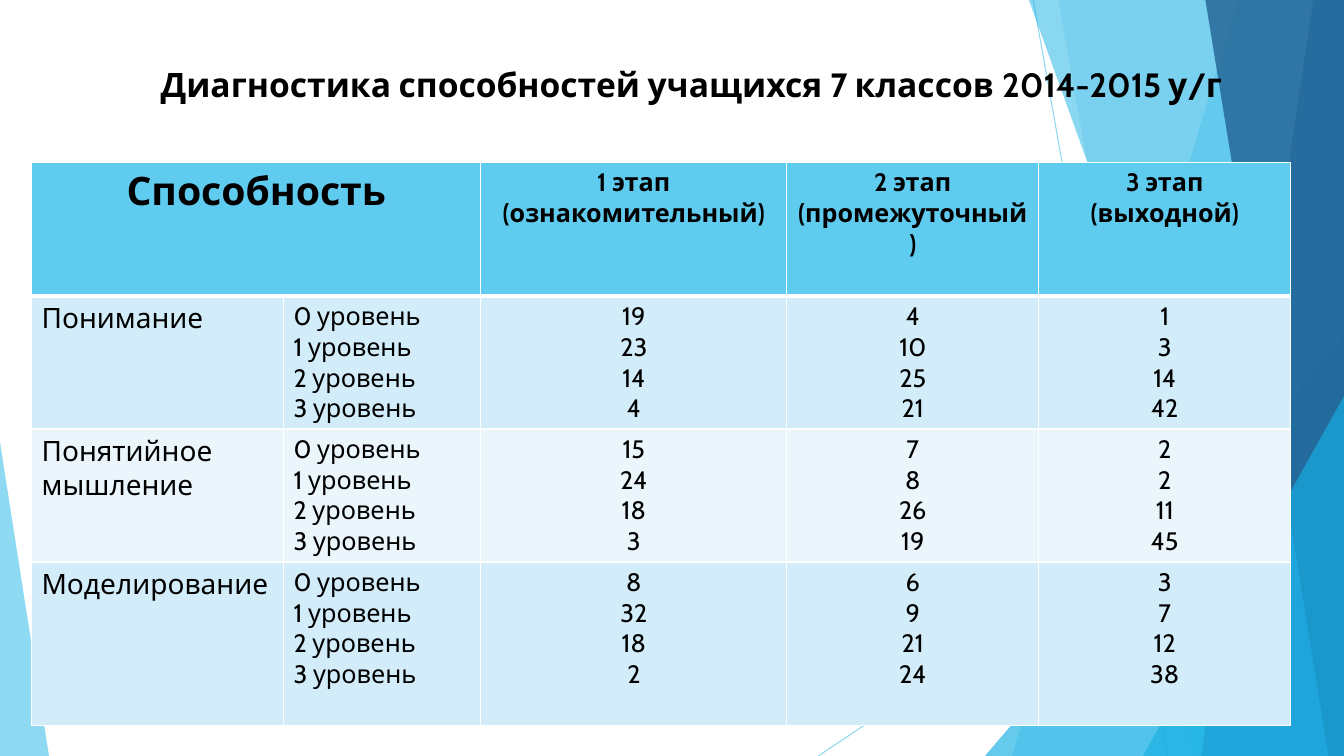
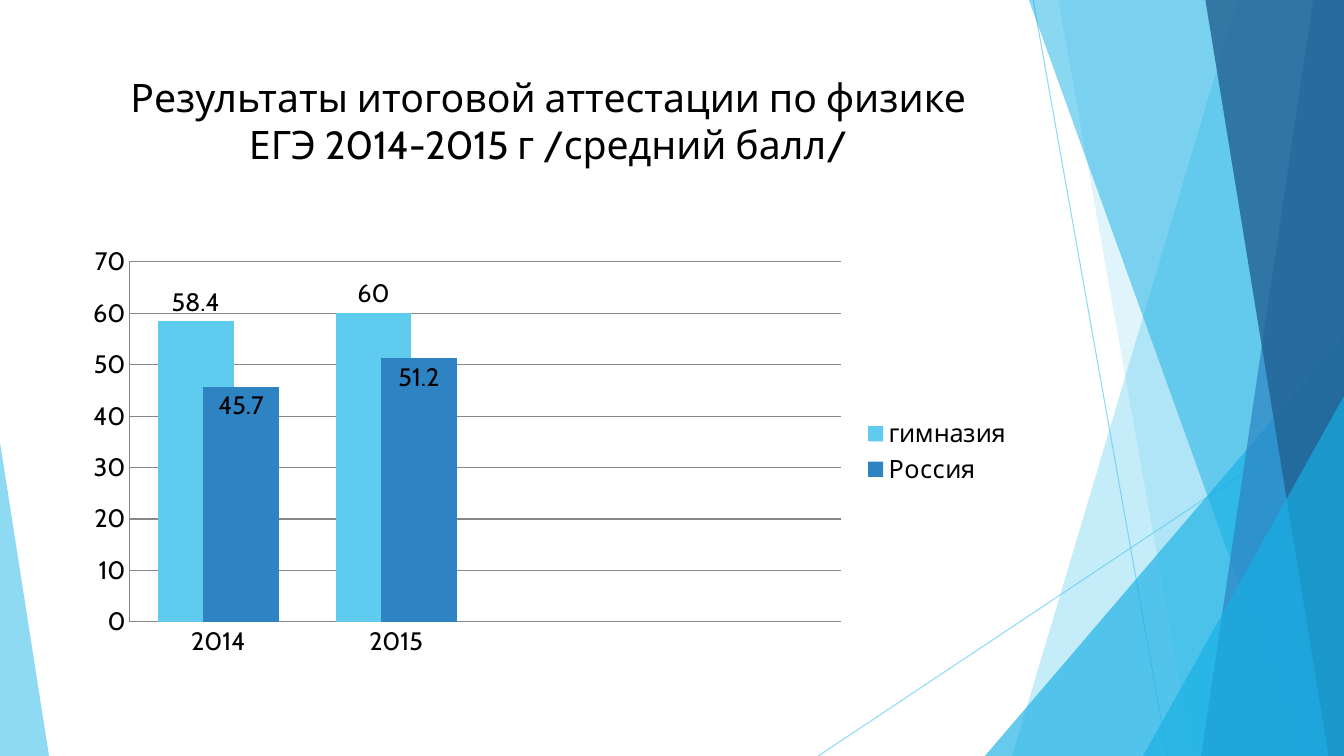
"""Two slides on school results: a table of abilities and a chart of exam scores."""
from lxml import etree
from pptx import Presentation
from pptx.chart.data import CategoryChartData
from pptx.dml.color import RGBColor
from pptx.enum.chart import XL_CHART_TYPE, XL_LABEL_POSITION, XL_LEGEND_POSITION, XL_TICK_MARK
from pptx.enum.shapes import MSO_CONNECTOR, MSO_SHAPE
from pptx.enum.text import MSO_ANCHOR, PP_ALIGN
from pptx.oxml.ns import qn
from pptx.util import Pt

SKY = RGBColor(0x5F, 0xCB, 0xEF)
AQUA = RGBColor(0x17, 0xB0, 0xE4)
BLUE = RGBColor(0x2E, 0x83, 0xC3)
NAVY = RGBColor(0x22, 0x62, 0x92)
PALE = RGBColor(0xD2, 0xEC, 0xF9)
MIST = RGBColor(0xEA, 0xF6, 0xFC)
GREY = RGBColor(0x87, 0x87, 0x87)
BLACK = RGBColor(0, 0, 0)
WHITE = RGBColor(255, 255, 255)
FONT = "Cabin"
WIDE, HIGH = 960, 540

LEFT, CENTER = PP_ALIGN.LEFT, PP_ALIGN.CENTER
MIDDLE = MSO_ANCHOR.MIDDLE
LINE = MSO_CONNECTOR.STRAIGHT
WEDGE = MSO_SHAPE.ISOSCELES_TRIANGLE
COLUMN = XL_CHART_TYPE.COLUMN_CLUSTERED
RIGHT = XL_LEGEND_POSITION.RIGHT
ABOVE, INSIDE = XL_LABEL_POSITION.OUTSIDE_END, XL_LABEL_POSITION.INSIDE_END
NO_TICK = XL_TICK_MARK.NONE

RAYS = [(738, 0, 834, HIGH), (WIDE, 290, 584.5, HIGH)]
BANDS = [
    ("band", (884, 723), SKY, 36),
    ("band", (756, 852), SKY, 20),
    ("wedge", (703.5, 240, 256.5, 300, 1), AQUA, 66),
    ("band", (735, 929.5), AQUA, 50),
    ("band", (938, 858), BLUE, 70),
    ("band", (861, 949), NAVY, 80),
    ("wedge", (816.5, 283, 143.5, 257, 1), AQUA, 66),
    ("wedge", (0, 316, 35, 224, 0), SKY, 70),
]

COLS = [180, 141, 218.5, 180, 180]
ROWS = [95.5, 95, 95, 117]
HEADS = ["Способность", "", "1 этап (ознакомительный)",
         "2 этап\n(промежуточный)", "3 этап\n(выходной)"]
LEVELS = [f"{n} уровень" for n in range(4)]
SKILLS = [
    ("Понимание", [19, 23, 14, 4], [4, 10, 25, 21], [1, 3, 14, 42]),
    ("Понятийное мышление", [15, 24, 18, 3], [7, 8, 26, 19], [2, 2, 11, 45]),
    ("Моделирование", [8, 32, 18, 2], [6, 9, 21, 24], [3, 7, 12, 38]),
]
YEARS = ["2014", "2015", "", ""]
SCORES = [
    ("гимназия", [58.4, 60, None, None], SKY, ABOVE),
    ("Россия", [45.7, 51.2, None, None], BLUE, INSIDE),
]


def points(box):
    """Turn a box of point values into lengths."""
    return [Pt(n) for n in box]


def fade(shape, share):
    """Make the colour of a shape see-through, with share in percent."""
    for tone in shape.element.iter(qn("a:srgbClr")):
        etree.SubElement(tone, qn("a:alpha"), val=str(share * 1000))


def style(font, size, bold=False):
    """Give a font the shared face and colour."""
    font.name, font.size, font.bold = FONT, Pt(size), bold
    font.color.rgb = BLACK


def write(frame, text, size, align, bold=False):
    """Fill a text frame and format all its runs."""
    frame.text = text
    for para in frame.paragraphs:
        para.alignment = align
        for run in para.runs:
            style(run.font, size, bold)


def draw_ray(slide, ends):
    """Draw one thin pale line."""
    ray = slide.shapes.add_connector(LINE, *points(ends))
    ray.line.color.rgb, ray.line.width = SKY, Pt(0.75)
    fade(ray, 70)
    etree.SubElement(ray.element.spPr, qn("a:effectLst"))


def draw_band(slide, kind, form, tone, share):
    """Draw one see-through band or wedge."""
    if kind == "band":
        top, foot = form
        path = slide.shapes.build_freeform(Pt(top), 0)
        rest = [(WIDE, 0), (WIDE, HIGH), (foot, HIGH)]
        path.add_line_segments([points(spot) for spot in rest])
        shape = path.convert_to_shape()
    else:
        *box, peak = form
        shape = slide.shapes.add_shape(WEDGE, *points(box))
        shape.adjustments[0] = peak
    shape.shadow.inherit = False
    shape.fill.solid()
    shape.fill.fore_color.rgb = tone
    shape.line.fill.background()
    fade(shape, share)


def add_base(deck):
    """Add a blank slide with the shared backdrop."""
    slide = deck.slides.add_slide(deck.slide_layouts[6])
    for ends in RAYS:
        draw_ray(slide, ends)
    for band in BANDS:
        draw_band(slide, *band)
    return slide


def add_title(slide, box, text, size, bold=False):
    """Place a centred title in the box."""
    frame = slide.shapes.add_textbox(*points(box)).text_frame
    frame.word_wrap = True
    frame.vertical_anchor = MIDDLE
    write(frame, text, size, CENTER, bold)


def edge_cell(cell, top, foot):
    """Draw white borders around a cell."""
    props = cell._tc.get_or_add_tcPr()
    for spot, (side, width) in enumerate([("L", 1), ("R", 1), ("T", top), ("B", foot)]):
        edge = etree.Element(qn(f"a:ln{side}"), w=str(Pt(width)))
        fill = etree.SubElement(edge, qn("a:solidFill"))
        etree.SubElement(fill, qn("a:srgbClr"), val=str(WHITE))
        props.insert(spot, edge)


def add_grid(slide, left, top):
    """Place the table of abilities with its corner at left, top."""
    box = (left, top, sum(COLS), sum(ROWS))
    grid = slide.shapes.add_table(len(ROWS), len(COLS), *points(box)).table
    for col, width in zip(grid.columns, COLS):
        col.width = Pt(width)
    for row, height in zip(grid.rows, ROWS):
        row.height = Pt(height)
    body = [[name, "\n".join(LEVELS)] + ["\n".join(map(str, stage)) for stage in stages]
            for name, *stages in SKILLS]
    for r, texts in enumerate([HEADS] + body):
        head = r == 0
        for c, text in enumerate(texts):
            cell = grid.cell(r, c)
            size = 18 if c else 28 if head else 20
            align = CENTER if head or c > 1 else LEFT
            write(cell.text_frame, text, size, align, head)
            cell.fill.solid()
            cell.fill.fore_color.rgb = SKY if head else PALE if r % 2 else MIST
            edge_cell(cell, 3 if r == 1 else 1, 3 if head else 1)
    grid.cell(0, 0).merge(grid.cell(0, 1))


def style_axis(axis):
    """Give an axis a thin grey line without ticks."""
    axis.major_tick_mark = axis.minor_tick_mark = NO_TICK
    axis.format.line.color.rgb, axis.format.line.width = GREY, Pt(0.75)


def add_graph(slide, box):
    """Place the column chart of exam scores in the box."""
    data = CategoryChartData()
    data.categories = YEARS
    for name, vals, *_ in SCORES:
        data.add_series(name, vals)
    chart = slide.shapes.add_chart(COLUMN, *points(box), data).chart
    style(chart.font, 18)
    chart.has_title = False
    chart.has_legend = True
    chart.legend.position = RIGHT
    chart.legend.include_in_layout = False
    scale = chart.value_axis
    scale.minimum_scale, scale.maximum_scale, scale.major_unit = 0, 70, 10
    scale.has_major_gridlines = True
    grid = scale.major_gridlines.format.line
    grid.color.rgb, grid.width = GREY, Pt(0.75)
    style_axis(scale)
    style_axis(chart.category_axis)
    plot = chart.plots[0]
    plot.vary_by_categories = False
    plot.gap_width, plot.overlap = 75, 40
    for bars, (_, _, tone, spot) in zip(plot.series, SCORES):
        bars.format.fill.solid()
        bars.format.fill.fore_color.rgb = tone
        bars.data_labels.show_value = True
        bars.data_labels.position = spot


def table_slide(deck):
    """Build the slide with the table of abilities."""
    slide = add_base(deck)
    text = "Диагностика способностей учащихся 7 классов 2014-2015 у/г"
    add_title(slide, (52.5, 30, 883, 60), text, 24, True)
    add_grid(slide, 22.5, 116)


def chart_slide(deck):
    """Build the slide with the chart of exam scores."""
    slide = add_base(deck)
    text = "Результаты итоговой аттестации по физике\vЕГЭ 2014-2015 г /средний балл/"
    add_title(slide, (53, 46, 677, 80), text, 28)
    add_graph(slide, (53, 170, 677, 305))


def main():
    """Build and save the deck."""
    deck = Presentation()
    deck.slide_width, deck.slide_height = Pt(WIDE), Pt(HIGH)
    table_slide(deck)
    chart_slide(deck)
    deck.save("out.pptx")


if __name__ == "__main__":
    main()
